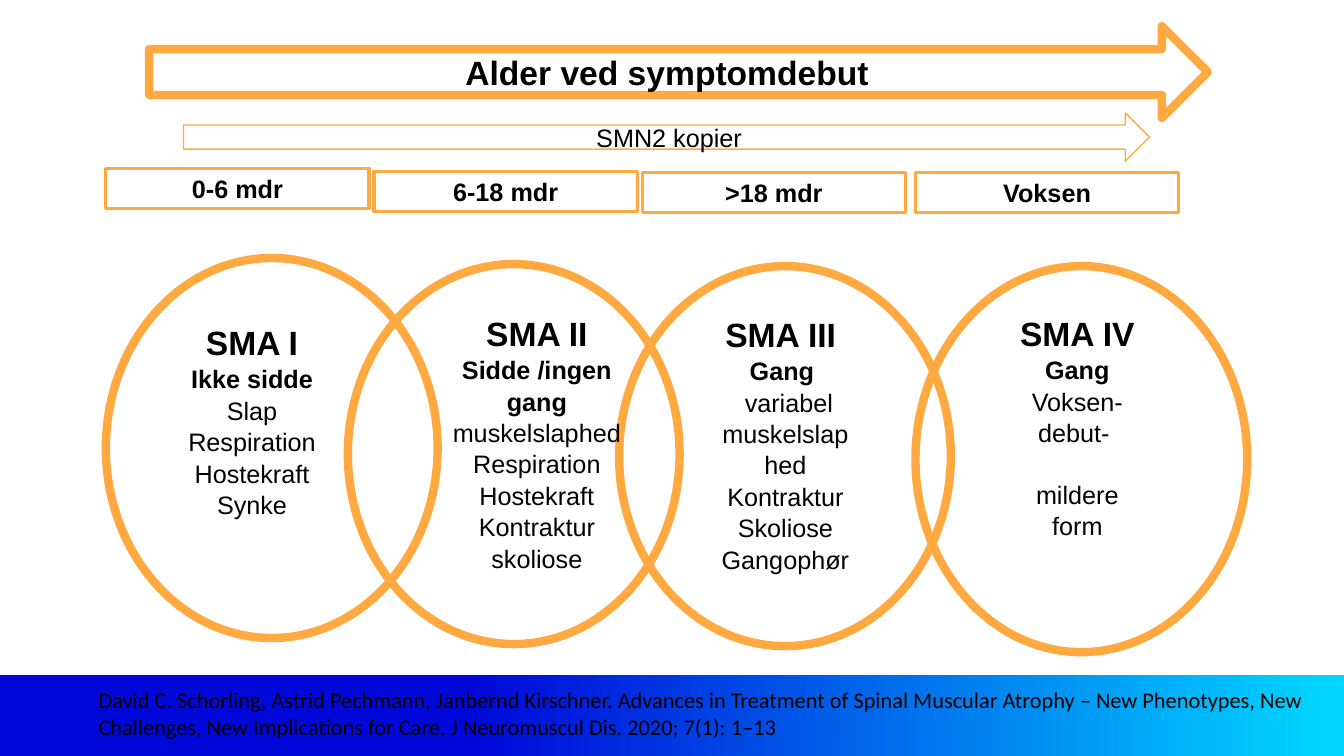
"""Build a slide on the SMA types ordered by age at symptom onset."""
from dataclasses import dataclass

from pptx import Presentation
from pptx import util as u
from pptx.dml.color import RGBColor
from pptx.enum import shapes, text

ORANGE = RGBColor(0xFF, 0xA9, 0x40)
BLACK = RGBColor(0, 0, 0)
DEEP_BLUE = RGBColor(0x00, 0x08, 0xD9)
CYAN = RGBColor(0x00, 0xD8, 0xFF)
KIND = shapes.MSO_SHAPE

HEADING = {"size": u.Pt(24), "bold": True, "name": "Arial"}
STRONG = {"size": u.Pt(18), "bold": True, "name": "Arial"}
BODY = {"size": u.Pt(18), "bold": False, "name": "Arial"}
CITATION = {"size": u.Pt(16), "bold": False, "name": "Calibri"}


@dataclass(frozen=True)
class Frame:
    left: float
    top: float
    width: float
    height: float

    def lengths(self) -> list:
        return [u.Inches(v) for v in (self.left, self.top, self.width, self.height)]


@dataclass(frozen=True)
class Outline:
    kind: KIND
    frame: Frame
    weight: float
    label: str = ""
    style: dict | None = None
    inset: float = 0.1


@dataclass(frozen=True)
class SmaType:
    frame: Frame
    name: str
    ability: str
    signs: tuple
    gap_before: str = ""


CIRCLES = [
    Outline(KIND.OVAL, Frame(left, top, 3.29, height), 6)
    for left, top, height in (
        (1.05, 2.56, 3.77), (6.14, 2.64, 3.77), (3.45, 2.62, 3.77), (9.08, 2.64, 3.83))
]
AGES = [
    Outline(KIND.RECTANGLE, Frame(left, top, 2.61, 0.4), 2.25, label, STRONG)
    for left, top, label in (
        (1.05, 1.67, "0-6 mdr"), (3.71, 1.7, "6-18 mdr"),
        (6.37, 1.71, ">18 mdr"), (9.08, 1.71, "Voksen"))
]
ARROWS = [
    Outline(KIND.RIGHT_ARROW, Frame(1.48, 0.26, 10.5, 0.91), 6,
            "Alder ved symptomdebut", HEADING),
    Outline(KIND.RIGHT_ARROW, Frame(1.82, 1.12, 9.58, 0.48), 1,
            "SMN2 kopier", BODY, 0.27),
]
SMA_TYPES = [
    SmaType(Frame(1.73, 3.13, 1.54, 2.32), "SMA I", "Ikke sidde",
            ("Slap", "Respiration", "Hostekraft", "Synke")),
    SmaType(Frame(4.34, 3.04, 1.97, 2.93), "SMA II", "Sidde /ingen gang",
            ("muskelslaphed", "Respiration", "Hostekraft", "Kontraktur", "skoliose")),
    SmaType(Frame(7.02, 3.05, 1.54, 2.93), "SMA III ", "Gang ",
            (" variabel muskelslaphed", "Kontraktur", "Skoliose", "Gangophør")),
    SmaType(Frame(9.96, 3.04, 1.45, 2.63), "SMA IV", "Gang",
            ("Voksen-debut- ", "mildere form"), "mildere form"),
]
SOURCE = (
    "David C. Schorling, Astrid Pechmann, Janbernd Kirschner. Advances in Treatment of "
    "Spinal Muscular Atrophy – New Phenotypes, New Challenges, New Implications for Care. "
    "J Neuromuscul Dis. 2020; 7(1): 1–13"
)


def write(para, words: str, style: dict, align=text.PP_ALIGN.CENTER) -> None:
    para.alignment = align
    span = para.add_run()
    span.text = words
    span.font.color.rgb = BLACK
    for key, value in style.items():
        setattr(span.font, key, value)


def draw_outline(page, item: Outline) -> None:
    shape = page.shapes.add_shape(item.kind, *item.frame.lengths())
    shape.shadow.inherit = False
    shape.fill.background()
    shape.line.color.rgb = ORANGE
    shape.line.width = u.Pt(item.weight)
    if item.label:
        body = shape.text_frame
        body.margin_left = u.Inches(item.inset)
        body.vertical_anchor = text.MSO_ANCHOR.MIDDLE
        write(body.paragraphs[0], item.label, item.style)


def add_box(page, frame: Frame):
    body = page.shapes.add_textbox(*frame.lengths()).text_frame
    body.word_wrap = True
    return body


def draw_type(page, item: SmaType) -> None:
    body = add_box(page, item.frame)
    lines = [(item.name, HEADING), (item.ability, STRONG)]
    lines += [(sign, BODY) for sign in item.signs]
    for index, (words, style) in enumerate(lines):
        para = body.add_paragraph() if index else body.paragraphs[0]
        para.line_spacing = 1.04
        if words == item.gap_before:
            para.space_before = u.Pt(21.6)
        write(para, words, style)


def draw_footer(page) -> None:
    bar = page.shapes.add_shape(KIND.RECTANGLE, *Frame(0, 6.7, 13.33, 0.8).lengths())
    bar.shadow.inherit = False
    bar.line.fill.background()
    bar.fill.gradient()
    bar.fill.gradient_angle = 0
    for stop, position, colour in zip(
            bar.fill.gradient_stops, (0.35, 1), (DEEP_BLUE, CYAN)):
        stop.position = position
        stop.color.rgb = colour


def main() -> None:
    deck = Presentation()
    deck.slide_width, deck.slide_height = u.Inches(13.33), u.Inches(7.5)
    page = deck.slides.add_slide(deck.slide_layouts[6])
    draw_footer(page)
    for circle in CIRCLES:
        draw_outline(page, circle)
    for sma_type in SMA_TYPES:
        draw_type(page, sma_type)
    for item in ARROWS + AGES:
        draw_outline(page, item)
    citation = add_box(page, Frame(0.88, 6.76, 12.33, 0.7))
    write(citation.paragraphs[0], SOURCE, CITATION, text.PP_ALIGN.LEFT)
    deck.save("out.pptx")


if __name__ == "__main__":
    main()
